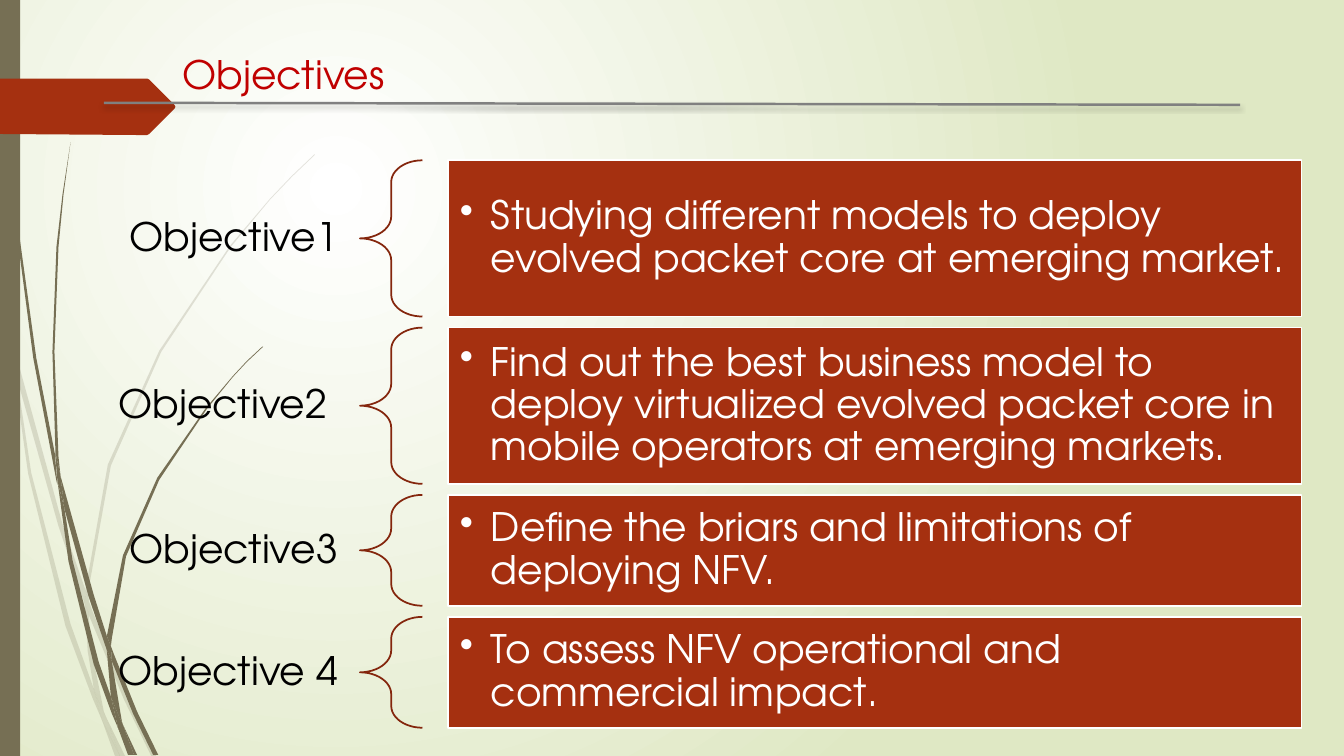
import pptx
import pptx.util
import pptx.dml.color
import pptx.enum.shapes
import pptx.enum.text
import pptx.oxml
import pptx.oxml.ns
from lxml import etree

Inches = pptx.util.Inches
Pt = pptx.util.Pt
SHAPE = pptx.enum.shapes.MSO_SHAPE
ANCHOR = pptx.enum.text.MSO_ANCHOR
ALIGN = pptx.enum.text.PP_ALIGN
qn = pptx.oxml.ns.qn

FONT = "TeX Gyre Adventor"
COLORS = {
    "centre": "FFFFFF", "edge": "DFE8C4", "olive": "766F54", "rust": "A53010",
    "brace": "84260D", "title": "C00000", "rule": "808080", "black": "000000",
    "white": "FFFFFF",
}

PALE_GRASS = [
    [(0.11, 3.5), (0.09, 3.22), (0, 2.82), (0, 2.99), (0.1, 3.44)],
    [(0.58, 5.22), (0.84, 5.99), (0.85, 5.86), (0.62, 5.2), (0.14, 3.45), (0.17, 3.76)],
    [(0.92, 6.07), (0.88, 5.96), (0.88, 6.1), (1.23, 6.94), (1.5, 7.5), (1.55, 7.5),
     (1.27, 6.92)],
    [(1.19, 7.5), (1.24, 7.5), (1.05, 7.11)],
    [(0.93, 6.83), (0.7, 6.19), (0.31, 4.69), (0.17, 3.76), (0.11, 3.5), (0.28, 4.7),
     (0.65, 6.21), (0.92, 6.93), (1.01, 7.14), (0.99, 7.07)],
    [(0.84, 5.99), (0.87, 6.46), (0.93, 6.83), (0.96, 6.92), (1.05, 7.11), (1.03, 7.06),
     (0.91, 6.46), (0.88, 6.1), (0.88, 6.08)],
    [(0.88, 5.84), (1.1, 4.62), (1.6, 3.49), (2.29, 2.45), (2.68, 1.98), (2.9, 1.75),
     (3.12, 1.54), (3.12, 1.53), (2.89, 1.75), (2.68, 1.97), (2.28, 2.44), (1.58, 3.48),
     (1.07, 4.61), (0.85, 5.84), (0.85, 5.86), (0.88, 5.96)],
    [(1.01, 7.14), (1.14, 7.5), (1.19, 7.5)],
    [(0.88, 6.08), (0.88, 6.1), (0.88, 5.96), (0.85, 5.86), (0.84, 5.99)],
    [(0.96, 6.92), (0.93, 6.83), (0.99, 7.07), (1.01, 7.14), (1.19, 7.5), (1.05, 7.11)],
]
DARK_GRASS = [
    [(0.07, 1.1), (0.17, 2.33), (0.33, 3.55), (0.56, 4.77), (0.57, 4.81), (0.55, 4.57),
     (0.55, 4.53), (0.36, 3.55), (0.19, 2.32), (0.08, 1.09), (0.05, 0.48), (0.04, 0),
     (0.03, 0), (0.04, 0.48)],
    [(0.88, 5.92), (1.06, 6.45), (1.06, 6.33), (1.06, 6.31), (0.93, 5.9), (0.6, 4.72),
     (0.64, 5.05)],
    [(1.13, 6.49), (1.1, 6.41), (1.11, 6.56), (1.32, 7.08), (1.52, 7.49), (1.57, 7.49),
     (1.36, 7.06)],
    [(1.1, 6.91), (0.98, 6.57), (0.72, 5.56), (0.64, 5.05), (0.57, 4.77), (0.68, 5.57),
     (0.93, 6.59), (1.11, 7.08), (1.17, 7.22), (1.16, 7.17)],
    [(0.6, 4.72), (0.58, 4.53), (0.54, 3.49), (0.58, 2.45), (0.63, 1.93), (0.7, 1.41),
     (0.62, 1.93), (0.56, 2.45), (0.52, 3.49), (0.55, 4.49)],
    [(1.33, 7.49), (1.36, 7.49), (1.22, 7.19)],
    [(0.57, 4.77), (0.64, 5.05), (0.6, 4.72), (0.55, 4.49), (0.55, 4.53)],
    [(1.11, 6.33), (1.25, 5.52), (1.58, 4.76), (2.05, 4.06), (2.31, 3.74), (2.45, 3.59),
     (2.61, 3.44), (2.6, 3.44), (2.45, 3.58), (2.31, 3.73), (2.04, 4.05), (1.56, 4.74),
     (1.22, 5.51), (1.06, 6.31), (1.1, 6.41)],
    [(1.17, 7.22), (1.27, 7.49), (1.31, 7.49)],
    [(1.06, 6.45), (1.1, 6.91), (1.16, 7.06), (1.22, 7.19), (1.21, 7.16), (1.11, 6.56),
     (1.09, 6.51)],
    [(1.06, 6.45), (1.09, 6.51), (1.11, 6.56), (1.1, 6.41), (1.06, 6.31), (1.06, 6.33)],
    [(1.16, 7.06), (1.1, 6.91), (1.16, 7.17), (1.17, 7.22), (1.3, 7.49), (1.33, 7.49),
     (1.22, 7.19)],
]
TAG = [(1.73, 1.08), (1.48, 1.33), (1.46, 1.34), (1.36, 1.34), (0, 1.33), (0, 0.78),
       (1.36, 0.78), (1.46, 0.78), (1.48, 0.79), (1.73, 1.04), (1.74, 1.06)]
OBJECTIVES = [
    ("Objective1", 1.55,
     "Studying different models to deploy evolved packet core at emerging market."),
    ("Objective2 ", 1.55,
     "Find out the best business model to deploy virtualized evolved packet core "
     "in mobile operators at emerging markets."),
    ("Objective3", 1.1, "Define the briars and limitations of deploying NFV."),
    ("Objective 4", 1.1, "To assess NFV operational and commercial impact."),
]


def rgb(name):
    """Return a named colour."""
    return pptx.dml.color.RGBColor.from_string(COLORS[name])


def paint(shape, fill=None, line=None):
    """Set fill and line of a shape and switch its shadow off."""
    shape.shadow.inherit = False
    if fill:
        shape.fill.solid()
        shape.fill.fore_color.rgb = rgb(fill)
    else:
        shape.fill.background()
    if line:
        shape.line.color.rgb = rgb(line)
        shape.line.width = Pt(1.25)
    else:
        shape.line.fill.background()


def write(shape, text, color, margins, anchor=ANCHOR.MIDDLE, align=ALIGN.LEFT, bullet=False):
    """Put one 28-point paragraph into a shape."""
    frame = shape.text_frame
    frame.word_wrap = True
    frame.vertical_anchor = anchor
    frame.margin_left = frame.margin_right = Inches(margins[0])
    frame.margin_top = frame.margin_bottom = Inches(margins[1])
    para = frame.paragraphs[0]
    para.text = text
    para.alignment = align
    if bullet:
        properties = para._p.get_or_add_pPr()
        properties.set("marL", str(Inches(0.31)))
        properties.set("indent", str(-Inches(0.31)))
        etree.SubElement(properties, qn("a:buChar")).set("char", "•")
    para.font.name = FONT
    para.font.size = Pt(28)
    para.font.color.rgb = rgb(color)
    return para


def add_outline(page, points, fill, alpha=None):
    """Draw a closed, filled outline through points given in inches."""
    units = [(round(x * 100), round(y * 100)) for x, y in points]
    builder = page.shapes.build_freeform(*units[0], scale=Inches(0.01))
    builder.add_line_segments(units[1:], close=True)
    shape = builder.convert_to_shape()
    paint(shape, fill)
    if alpha:
        color = shape._element.spPr.find(qn("a:solidFill"))[0]
        etree.SubElement(color, qn("a:alpha")).set("val", str(alpha * 1000))


def add_background(page):
    """Fill the page with a circular gradient centred at its upper left."""
    fill = page.background.fill
    fill.gradient()
    for position, (stop, name) in enumerate(zip(fill.gradient_stops, ("centre", "edge"))):
        stop.color.rgb = rgb(name)
        stop.position = position
    linear = next(page._element.iter(qn("a:lin")))
    circle = etree.Element(qn("a:path"), path="circle")
    etree.SubElement(circle, qn("a:fillToRect"), l="50000", t="50000", r="100000", b="100000")
    linear.getparent().replace(linear, circle)


def add_decoration(page, height):
    """Draw the grass, the side bar and the pointed tag."""
    for points in PALE_GRASS:
        add_outline(page, points, "olive", alpha=20)
    for points in DARK_GRASS:
        add_outline(page, points, "olive")
    bar = page.shapes.add_shape(SHAPE.RECTANGLE, 0, 0, Inches(0.2), Inches(height))
    paint(bar, "olive")
    add_outline(page, TAG, "rust")


def add_title(page, left, top, width, height):
    """Write the title and draw the shadowed rule below it."""
    box = page.shapes.add_textbox(Inches(left), Inches(top), Inches(width), Inches(height))
    write(box, "Objectives", "title", (0.1, 0.05), anchor=ANCHOR.BOTTOM)
    box.text_frame.margin_left = Inches(0.64)
    bottom = top + height
    rule = page.shapes.add_connector(
        pptx.enum.shapes.MSO_CONNECTOR.STRAIGHT,
        Inches(1.03), Inches(bottom), Inches(12.3), Inches(bottom + 0.02))
    rule.line.color.rgb = rgb("rule")
    rule.line.width = Pt(1.75)
    effects = etree.SubElement(rule._element.spPr, qn("a:effectLst"))
    shadow = etree.SubElement(effects, qn("a:outerShdw"), blurRad=str(Pt(3)),
                              dist=str(Pt(2)), dir="5400000", rotWithShape="0")
    color = etree.SubElement(shadow, qn("a:srgbClr"), val=COLORS["black"])
    etree.SubElement(color, qn("a:alpha"), val="25000")


def add_objective(page, left, top, height, label, text):
    """Draw one row: label, brace and filled text panel."""
    label_height = 0.61
    name = page.shapes.add_textbox(Inches(left), Inches(top + (height - label_height) / 2),
                                   Inches(3.11), Inches(label_height))
    write(name, label, "black", (0.22, 0.08), align=ALIGN.RIGHT).line_spacing = 0.9
    brace = page.shapes.add_shape(SHAPE.LEFT_BRACE, Inches(left + 3.11), Inches(top),
                                  Inches(0.62), Inches(height))
    brace.adjustments[0], brace.adjustments[1] = 0.35, 0.5
    paint(brace, line="brace")
    panel = page.shapes.add_shape(SHAPE.RECTANGLE, Inches(left + 3.98), Inches(top),
                                  Inches(8.47), Inches(height))
    paint(panel, "rust", "white")
    write(panel, text, "white", (0.12, 0.12), bullet=True).line_spacing = 0.9


def main():
    """Build the slide and save it."""
    deck = pptx.Presentation()
    deck.slide_width, deck.slide_height = Inches(13.33), Inches(7.5)
    page = deck.slides.add_slide(deck.slide_layouts[6])
    add_background(page)
    add_decoration(page, 7.5)
    add_title(page, 1.17, 0.32, 11.76, 0.7)
    top, gap = 1.59, 0.11
    for label, height, text in OBJECTIVES:
        add_objective(page, 0.46, top, height, label, text)
        top += height + gap
    deck.save("out.pptx")


if __name__ == "__main__":
    main()
